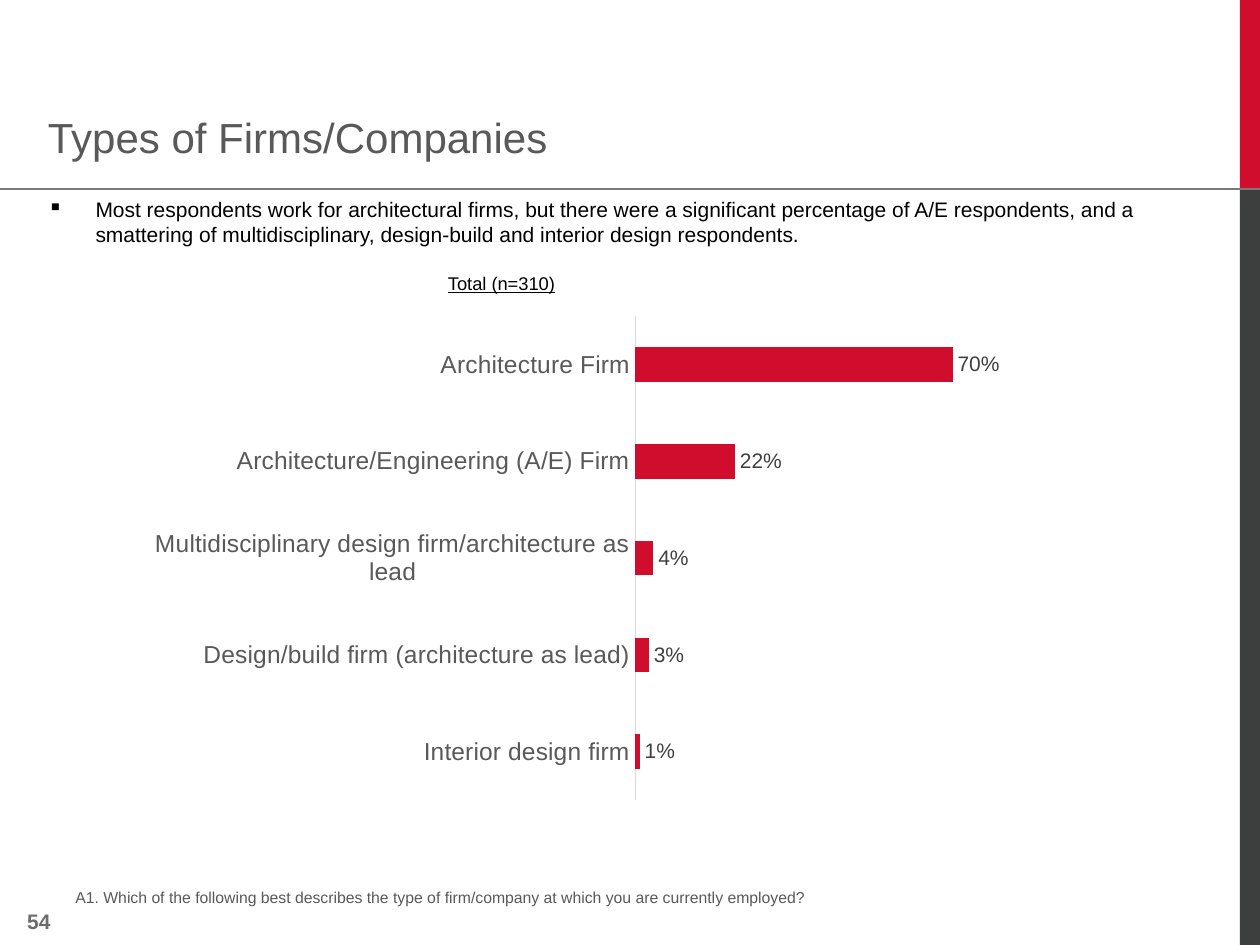
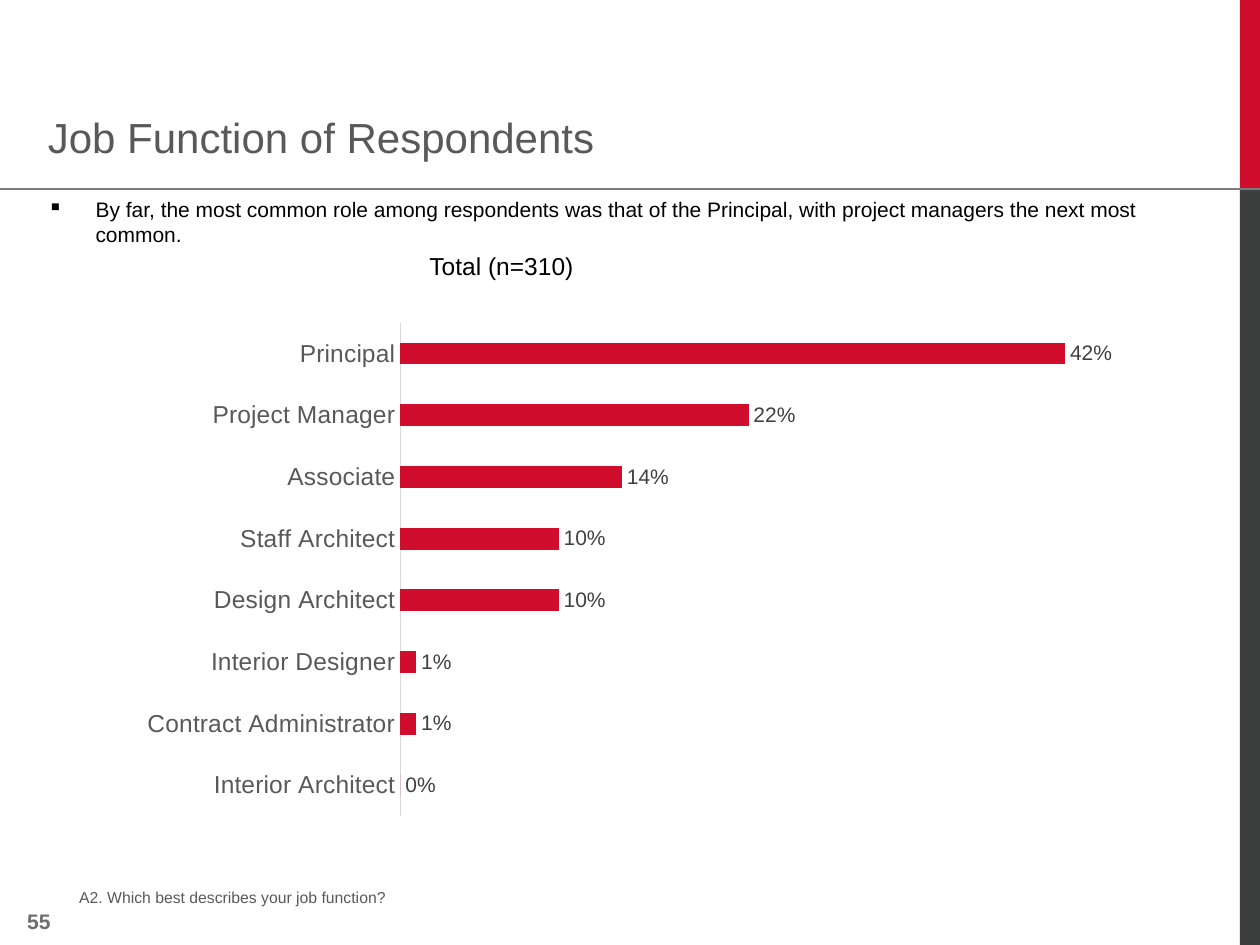
"""Build two survey slides, each with a headline finding and a bar chart."""
from dataclasses import dataclass

from lxml.etree import SubElement
from pptx import Presentation
from pptx.chart.data import CategoryChartData
from pptx.dml.color import RGBColor
from pptx.enum.chart import XL_CHART_TYPE, XL_LABEL_POSITION, XL_TICK_MARK
from pptx.enum.shapes import MSO_CONNECTOR, MSO_SHAPE
from pptx.enum.text import MSO_ANCHOR, MSO_AUTO_SIZE, PP_ALIGN
from pptx.oxml.ns import qn
from pptx.slide import Slide
from pptx.util import Inches, Pt

FONT = "Arial"
COLORS = {
    "red": "D00D2D",
    "charcoal": "3D3E3E",
    "rule": "7A7A7A",
    "axis": "D9D9D9",
    "number": "6D6D6D",
    "muted": "595959",
    "label": "404040",
    "black": "000000",
}
Area = tuple[float, float, float, float]


@dataclass(frozen=True)
class Band:
    """A coloured block on the right edge."""
    top: float
    height: float
    color: str


@dataclass(frozen=True)
class TextStyle:
    """The look of one kind of text."""
    size: float
    color: str
    bold: bool = False
    underline: bool = False
    align: PP_ALIGN = PP_ALIGN.LEFT
    line_spacing: float | None = None
    bullet: str = ""


@dataclass(frozen=True)
class Survey:
    """The content of one survey slide."""
    number: int
    title: str
    finding: str
    question: str
    question_left: float
    total_style: TextStyle
    total_top: float
    total_height: float
    chart_area: Area
    axis_maximum: float
    answers: dict[str, float]


BANDS = (Band(0, 1.5, "red"), Band(1.5, 6, "charcoal"))
TITLE = TextStyle(24, "muted", line_spacing=0.8)
FINDING = TextStyle(12, "black", bullet="▪")
QUESTION = TextStyle(9, "muted")
NUMBER = TextStyle(12, "number", bold=True, align=PP_ALIGN.RIGHT)

SURVEYS = (
    Survey(
        number=54,
        title="Types of Firms/Companies",
        finding="Most respondents work for architectural firms, but there were a "
                "significant percentage of A/E respondents, and a smattering of "
                "multidisciplinary, design-build and interior design respondents.",
        question="A1. Which of the following best describes the type of firm/company "
                 "at which you are currently employed?",
        question_left=0.5,
        total_style=TextStyle(10.5, "black", underline=True, align=PP_ALIGN.CENTER),
        total_top=2.11,
        total_height=0.28,
        chart_area=(1.09, 2.43, 6.97, 4),
        axis_maximum=0.8,
        answers={
            "Interior design firm": 0.01,
            "Design/build firm (architecture as lead)": 0.03,
            "Multidisciplinary design firm/architecture as lead": 0.04,
            "Architecture/Engineering (A/E) Firm": 0.22,
            "Architecture Firm": 0.7,
        },
    ),
    Survey(
        number=55,
        title="Job Function of Respondents",
        finding="By far, the most common role among respondents was that of the "
                "Principal, with project managers the next most common.",
        question="A2. Which best describes your job function?",
        question_left=0.53,
        total_style=TextStyle(14, "black", align=PP_ALIGN.CENTER),
        total_top=1.94,
        total_height=0.34,
        chart_area=(1.01, 2.48, 7.98, 4.08),
        axis_maximum=0.45,
        answers={
            "Interior Architect": 0,
            "Contract Administrator": 0.01,
            "Interior Designer": 0.01,
            "Design Architect": 0.1,
            "Staff Architect": 0.1,
            "Associate": 0.14,
            "Project Manager": 0.22,
            "Principal": 0.42,
        },
    ),
)


def rgb(name: str) -> RGBColor:
    """Return a named colour."""
    return RGBColor.from_string(COLORS[name])


def style_font(font, size: float, color: str) -> None:
    """Set the face, size and colour of a font."""
    font.name = FONT
    font.size = Pt(size)
    font.color.rgb = rgb(color)


def add_bullet(para, bullet: str, color: str) -> None:
    """Give a paragraph a hanging bullet."""
    properties = para._p.get_or_add_pPr()
    properties.set("marL", str(Inches(0.38)))
    properties.set("indent", str(Inches(-0.38)))
    bullet_color = SubElement(properties, qn("a:buClr"))
    SubElement(bullet_color, qn("a:srgbClr"), val=COLORS[color])
    SubElement(properties, qn("a:buChar"), char=bullet)


def write(box, area: Area, text: str, style: TextStyle, grow: bool = True) -> None:
    """Place a text shape and fill it with one styled run."""
    box.left, box.top, box.width, box.height = map(Inches, area)
    frame = box.text_frame
    frame.word_wrap = True
    frame.vertical_anchor = MSO_ANCHOR.TOP
    frame.auto_size = MSO_AUTO_SIZE.SHAPE_TO_FIT_TEXT if grow else MSO_AUTO_SIZE.NONE
    para = frame.paragraphs[0]
    if style.bullet:
        add_bullet(para, style.bullet, style.color)
    para.alignment = style.align
    para.line_spacing = style.line_spacing
    span = para.add_run()
    span.text = text
    style_font(span.font, style.size, style.color)
    span.font.bold = style.bold
    span.font.underline = style.underline


def add_text(page: Slide, area: Area, text: str, style: TextStyle, grow: bool = True) -> None:
    """Add a text box."""
    write(page.shapes.add_textbox(*map(Inches, area)), area, text, style, grow)


def add_frame(page: Slide, number: int) -> None:
    """Draw the bands, the rule and the page number."""
    add_text(page, (0, 7.16, 0.5, 0.22), str(number), NUMBER, grow=False)
    for band in BANDS:
        block = page.shapes.add_shape(
            MSO_SHAPE.RECTANGLE, Inches(9.84), Inches(band.top), Inches(0.16), Inches(band.height))
        block.shadow.inherit = False
        block.fill.solid()
        block.fill.fore_color.rgb = rgb(band.color)
        block.line.fill.background()
    rule = page.shapes.add_connector(
        MSO_CONNECTOR.STRAIGHT, Inches(10), Inches(1.5), Inches(0), Inches(1.5))
    rule.line.color.rgb = rgb("rule")
    rule.line.width = Pt(1)
    SubElement(rule._element.spPr, qn("a:effectLst"))


def add_bars(page: Slide, survey: Survey) -> None:
    """Chart the share of each answer."""
    data = CategoryChartData(number_format="0%")
    data.categories = list(survey.answers)
    data.add_series("Series 1", list(survey.answers.values()))
    chart = page.shapes.add_chart(
        XL_CHART_TYPE.BAR_CLUSTERED, *map(Inches, survey.chart_area), data).chart
    style_font(chart.font, 10, "black")
    chart.has_legend = False
    chart.has_title = False

    category_axis = chart.category_axis
    category_axis.major_tick_mark = XL_TICK_MARK.NONE
    category_axis.format.line.color.rgb = rgb("axis")
    category_axis.format.line.width = Pt(0.75)
    style_font(category_axis.tick_labels.font, 14, "muted")

    value_axis = chart.value_axis
    value_axis.has_major_gridlines = False
    value_axis.minimum_scale = 0
    value_axis.maximum_scale = survey.axis_maximum
    value_axis.visible = False

    plot = chart.plots[0]
    plot.gap_width = 182
    plot.vary_by_categories = False
    bars = plot.series[0]
    bars.format.fill.solid()
    bars.format.fill.fore_color.rgb = rgb("red")
    labels = bars.data_labels
    labels.show_value = True
    labels.position = XL_LABEL_POSITION.OUTSIDE_END
    labels.number_format = "0%"
    labels.number_format_is_linked = False
    style_font(labels.font, 12, "label")


def add_survey(deck, survey: Survey) -> None:
    """Add one complete survey slide."""
    page = deck.slides.add_slide(deck.slide_layouts[5])
    add_frame(page, survey.number)
    write(page.shapes.title, (0.28, 0.91, 9.14, 0.42), survey.title, TITLE)
    add_text(page, (survey.question_left, 7, 7.06, 0.25), survey.question, QUESTION)
    add_text(page, (3.24, survey.total_top, 1.48, survey.total_height),
             "Total (n=310)", survey.total_style)
    add_text(page, (0.28, 1.51, 9.31, 0.5), survey.finding, FINDING)
    add_bars(page, survey)


def main() -> None:
    """Build and save the deck."""
    deck = Presentation()
    deck.slide_width, deck.slide_height = Inches(10), Inches(7.5)
    for survey in SURVEYS:
        add_survey(deck, survey)
    deck.save("out.pptx")


if __name__ == "__main__":
    main()
